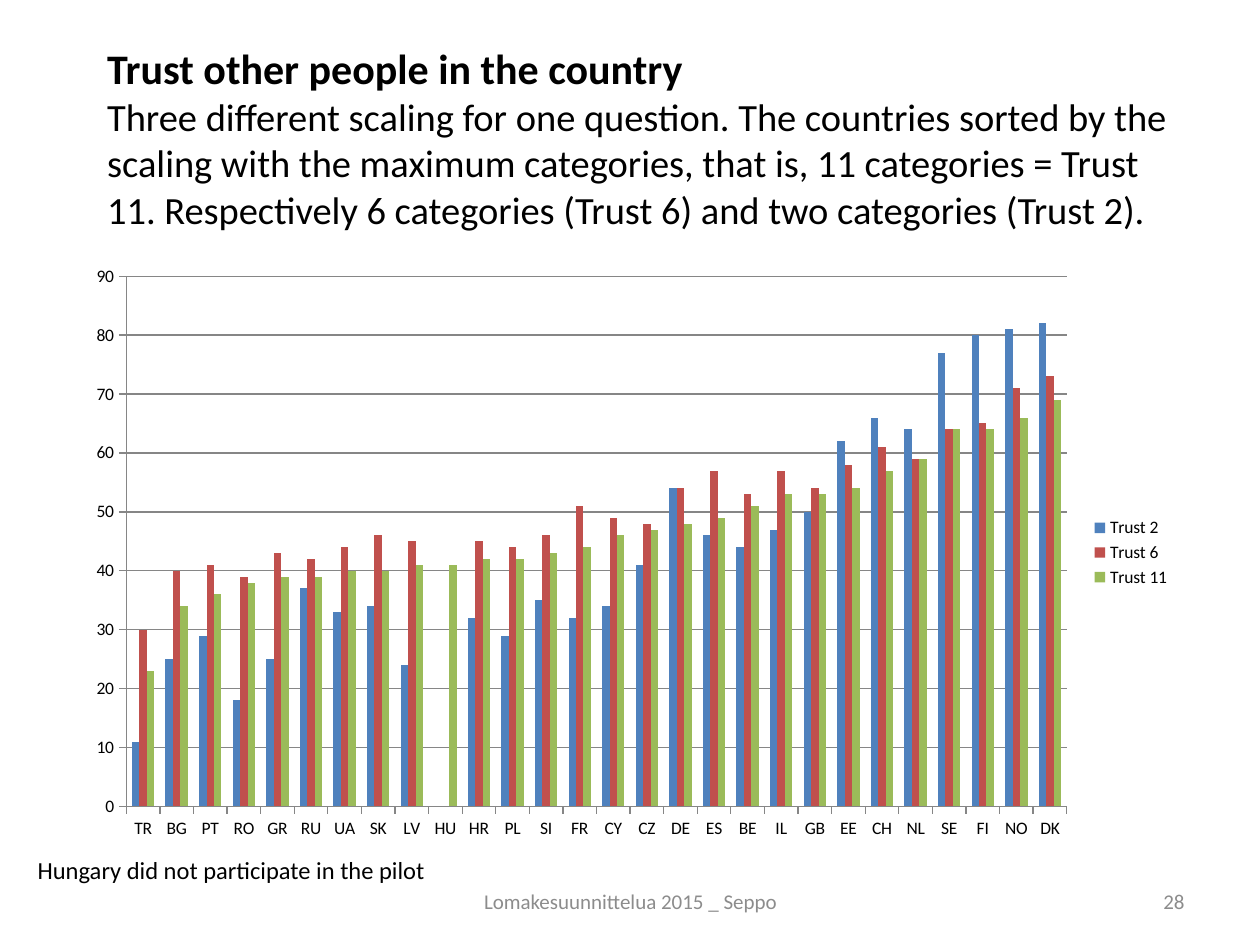
from pptx import Presentation
from pptx.chart.data import CategoryChartData
from pptx.dml.color import RGBColor
from pptx.enum.chart import XL_CHART_TYPE as ChartType
from pptx.enum.chart import XL_LEGEND_POSITION as LegendPosition
from pptx.enum.chart import XL_TICK_MARK as TickMark
from pptx.enum.text import MSO_ANCHOR as Anchor
from pptx.enum.text import MSO_AUTO_SIZE as AutoSize
from pptx.enum.text import PP_ALIGN as Align
from pptx.util import Inches, Pt

WIDTH, HEIGHT = Inches(10), Inches(7.5)
TITLE_ONLY = 5
FONT = "Calibri"
BLACK = RGBColor(0x00, 0x00, 0x00)
FOOTER_GREY = RGBColor(0x8C, 0x8C, 0x8C)
GRID_GREY = RGBColor(0x86, 0x86, 0x86)
BLUE = RGBColor(0x4F, 0x81, 0xBD)
RED = RGBColor(0xC0, 0x50, 0x4D)
GREEN = RGBColor(0x9B, 0xBB, 0x59)

HEADING = "Trust other people in the country"
EXPLANATION = (
    "Three different scaling for one question. The countries sorted by the "
    "scaling with the maximum categories, that is, 11 categories = Trust 11. "
    "Respectively 6 categories (Trust 6) and two categories (Trust 2)."
)
COUNTRIES = (
    "TR BG PT RO GR RU UA SK LV HU HR PL SI FR "
    "CY CZ DE ES BE IL GB EE CH NL SE FI NO DK"
).split()
TRUST = {
    "Trust 2": (BLUE, [11, 25, 29, 18, 25, 37, 33, 34, 24, None, 32, 29, 35, 32,
                       34, 41, 54, 46, 44, 47, 50, 62, 66, 64, 77, 80, 81, 82]),
    "Trust 6": (RED, [30, 40, 41, 39, 43, 42, 44, 46, 45, None, 45, 44, 46, 51,
                      49, 48, 54, 57, 53, 57, 54, 58, 61, 59, 64, 65, 71, 73]),
    "Trust 11": (GREEN, [23, 34, 36, 38, 39, 39, 40, 40, 41, 41, 42, 42, 43, 44,
                         46, 47, 48, 49, 51, 53, 53, 54, 57, 59, 64, 64, 66, 69]),
}


def area(left, top, width, height):
    """Turn inches on the slide into a dict of position and size."""
    return dict(left=Inches(left), top=Inches(top),
                width=Inches(width), height=Inches(height))


def apply(target, formats):
    for name, value in formats.items():
        setattr(target, name, value)


def style_font(font, size, colour=BLACK, bold=False):
    apply(font, dict(name=FONT, size=Pt(size), bold=bold))
    font.color.rgb = colour


def write(paragraph, text, size, colour=BLACK, bold=False, align=Align.LEFT):
    paragraph.alignment = align
    run = paragraph.add_run()
    run.text = text
    style_font(run.font, size, colour, bold)


def add_heading(slide):
    title = slide.shapes.title
    apply(title, area(0.75, 0.29, 8.82, 1.62))
    frame = title.text_frame
    apply(frame, dict(word_wrap=True, auto_size=AutoSize.NONE,
                      vertical_anchor=Anchor.TOP))
    write(frame.paragraphs[0], HEADING, 24, bold=True)
    write(frame.add_paragraph(), EXPLANATION, 22)


def add_note(slide, place, text, size, wrap=True, anchor=Anchor.TOP, **look):
    frame = slide.shapes.add_textbox(**place).text_frame
    apply(frame, dict(word_wrap=wrap, vertical_anchor=anchor))
    write(frame.paragraphs[0], text, size, **look)


def style_axis(axis):
    apply(axis, dict(major_tick_mark=TickMark.OUTSIDE,
                     minor_tick_mark=TickMark.NONE))
    style_line(axis.format.line)


def style_line(line):
    line.color.rgb = GRID_GREY
    line.width = Pt(0.75)


def add_trust_chart(slide):
    data = CategoryChartData(number_format="0")
    data.categories = COUNTRIES
    for name, (_, values) in TRUST.items():
        data.add_series(name, values)
    place = area(0.59, 2.02, 8.8, 4.73)
    chart = slide.shapes.add_chart(
        ChartType.COLUMN_CLUSTERED, place["left"], place["top"],
        place["width"], place["height"], data).chart

    style_font(chart.font, 10)
    apply(chart, dict(has_title=False, has_legend=True))
    apply(chart.legend, dict(position=LegendPosition.RIGHT,
                             include_in_layout=False))
    style_axis(chart.category_axis)
    scale = chart.value_axis
    style_axis(scale)
    apply(scale, dict(minimum_scale=0, maximum_scale=90, major_unit=10,
                      has_major_gridlines=True))
    style_line(scale.major_gridlines.format.line)

    plot = chart.plots[0]
    apply(plot, dict(gap_width=150, overlap=0, vary_by_categories=False))
    for series, (colour, _) in zip(plot.series, TRUST.values()):
        series.format.fill.solid()
        series.format.fill.fore_color.rgb = colour


def main():
    deck = Presentation()
    apply(deck, dict(slide_width=WIDTH, slide_height=HEIGHT))
    slide = deck.slides.add_slide(deck.slide_layouts[TITLE_ONLY])

    add_heading(slide)
    add_trust_chart(slide)
    add_note(slide, area(0.2, 6.74, 3.35, 0.34),
             "Hungary did not participate in the pilot", 14, wrap=False)
    footer = dict(size=12, anchor=Anchor.MIDDLE, colour=FOOTER_GREY)
    add_note(slide, area(3.42, 6.95, 3.17, 0.4),
             "Lomakesuunnittelua 2015 _ Seppo", align=Align.CENTER, **footer)
    add_note(slide, area(7.17, 6.95, 2.33, 0.4), "28", align=Align.RIGHT, **footer)

    deck.save("out.pptx")


if __name__ == "__main__":
    main()
